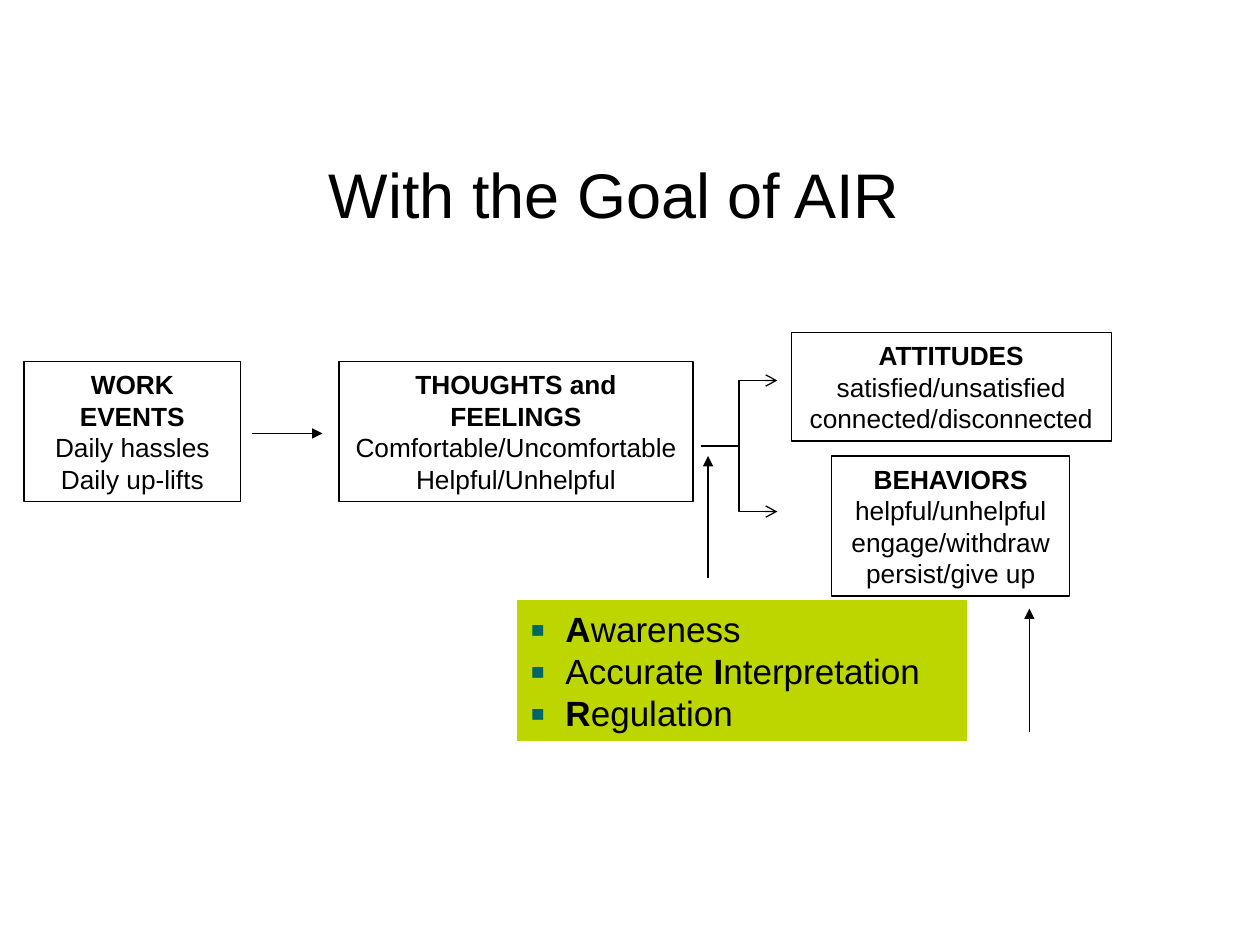
from dataclasses import dataclass

from lxml import etree
from pptx import Presentation
from pptx.dml.color import RGBColor
from pptx.enum.shapes import MSO_CONNECTOR, MSO_SHAPE
from pptx.enum.text import MSO_ANCHOR, MSO_AUTO_SIZE, PP_ALIGN
from pptx.oxml.ns import qn
from pptx.util import Inches, Pt

STRAIGHT, ELBOW = MSO_CONNECTOR.STRAIGHT, MSO_CONNECTOR.ELBOW
RECT = MSO_SHAPE.RECTANGLE
MIDDLE = MSO_ANCHOR.MIDDLE
GROW = MSO_AUTO_SIZE.SHAPE_TO_FIT_TEXT
LEFT, CENTER = PP_ALIGN.LEFT, PP_ALIGN.CENTER


@dataclass(frozen=True)
class Theme:
    """Colours, font and sizes of the slide."""
    ink: RGBColor = RGBColor(0, 0, 0)
    goal: RGBColor = RGBColor(0xBE, 0xD6, 0x00)
    bullet: str = "006666"
    font: str = "Arial"
    title: Pt = Pt(36)
    goal_text: Pt = Pt(20)
    body: Pt = Pt(15)
    line: Pt = Pt(0.75)


THEME = Theme()


def add_run(p, text, size, bold=False):
    """Append one styled run to a paragraph."""
    r = p.add_run()
    r.text = text
    r.font.name, r.font.size, r.font.bold = THEME.font, size, bold
    r.font.color.rgb = THEME.ink


def paragraphs(tf, count):
    """Return the given number of paragraphs of an empty text frame."""
    return [tf.paragraphs[0]] + [tf.add_paragraph() for _ in range(count - 1)]


def add_title(s, box, text):
    """Place the centred slide title."""
    tf = s.shapes.add_textbox(*map(Inches, box)).text_frame
    tf.word_wrap, tf.vertical_anchor = True, MIDDLE
    p = tf.paragraphs[0]
    p.alignment = CENTER
    add_run(p, text, THEME.title)


def add_rect(s, box, line, fill=None):
    """Place a rectangle and return its text frame."""
    sp = s.shapes.add_shape(RECT, *map(Inches, box))
    sp.shadow.inherit = False
    sp.line.color.rgb, sp.line.width = line, THEME.line
    if fill is None:
        sp.fill.background()
    else:
        sp.fill.solid()
        sp.fill.fore_color.rgb = fill
    tf = sp.text_frame
    tf.word_wrap, tf.auto_size = True, GROW
    return tf


def add_stage(s, box, heading, *details):
    """Place an outlined box with a bold heading over plain lines."""
    lines = (heading, *details)
    tf = add_rect(s, box, THEME.ink)
    for p, text in zip(paragraphs(tf, len(lines)), lines):
        p.alignment = CENTER
        add_run(p, text, THEME.body, bold=text == heading)


def add_bullet(p):
    """Give a paragraph a hanging square bullet."""
    pPr = p._p.get_or_add_pPr()
    indent = Inches(0.28)
    pPr.set("marL", str(indent))
    pPr.set("indent", str(-indent))
    color = etree.SubElement(pPr, qn("a:buClr"))
    etree.SubElement(color, qn("a:srgbClr"), val=THEME.bullet)
    etree.SubElement(pPr, qn("a:buSzPct"), val="125000")
    etree.SubElement(pPr, qn("a:buFont"), typeface=THEME.font)
    etree.SubElement(pPr, qn("a:buChar"), char="▪")


def add_goals(s, box, goals):
    """Place the filled list; each goal is a list of (text, bold) runs."""
    tf = add_rect(s, box, THEME.goal, THEME.goal)
    for p, runs in zip(paragraphs(tf, len(goals)), goals):
        p.alignment = LEFT
        add_bullet(p)
        for text, bold in runs:
            add_run(p, text, THEME.goal_text, bold)


def add_arrow(s, start, end, kind=STRAIGHT, head="triangle"):
    """Draw a connector with an arrowhead at its end."""
    c = s.shapes.add_connector(kind, *map(Inches, (*start, *end)))
    c.line.color.rgb, c.line.width = THEME.ink, THEME.line
    etree.SubElement(c.line._get_or_add_ln(), qn("a:tailEnd"), type=head)
    etree.SubElement(c._element.spPr, qn("a:effectLst"))


def add_fork(s, box):
    """Draw two elbow arrows from the left middle to the right corners."""
    x, y, w, h = box
    for end_y in (y, y + h):
        add_arrow(s, (x, y + h / 2), (x + w, end_y), ELBOW, "arrow")


def main():
    """Build and save the slide."""
    prs = Presentation()
    prs.slide_width, prs.slide_height = Inches(10), Inches(7.5)
    s = prs.slides.add_slide(prs.slide_layouts[6])
    add_title(s, (1.5, 1.13, 6.75, 0.81), "With the Goal of AIR")
    add_stage(s, (0.19, 2.87, 1.72, 1.11),
              "WORK EVENTS", "Daily hassles", "Daily up-lifts")
    add_stage(s, (2.69, 2.87, 2.81, 1.11), "THOUGHTS and FEELINGS",
              "Comfortable/Uncomfortable", "Helpful/Unhelpful")
    add_stage(s, (6.28, 2.64, 2.54, 0.86), "ATTITUDES",
              "satisfied/unsatisfied", "connected/disconnected")
    add_stage(s, (6.6, 3.62, 1.89, 1.11), "BEHAVIORS",
              "helpful/unhelpful", "engage/withdraw", "persist/give up")
    add_arrow(s, (2, 3.44), (2.56, 3.44))
    add_fork(s, (5.56, 3.02, 0.61, 1.04))
    add_arrow(s, (5.62, 4.59), (5.62, 3.62))
    add_goals(s, (4.11, 4.77, 3.56, 1.11), [
        [("A", True), ("wareness", False)],
        [("Accurate", False), (" I", True), ("nterpretation", False)],
        [("R", True), ("egulation", False)],
    ])
    add_arrow(s, (8.17, 5.81), (8.17, 4.83))
    prs.save("out.pptx")


if __name__ == "__main__":
    main()
